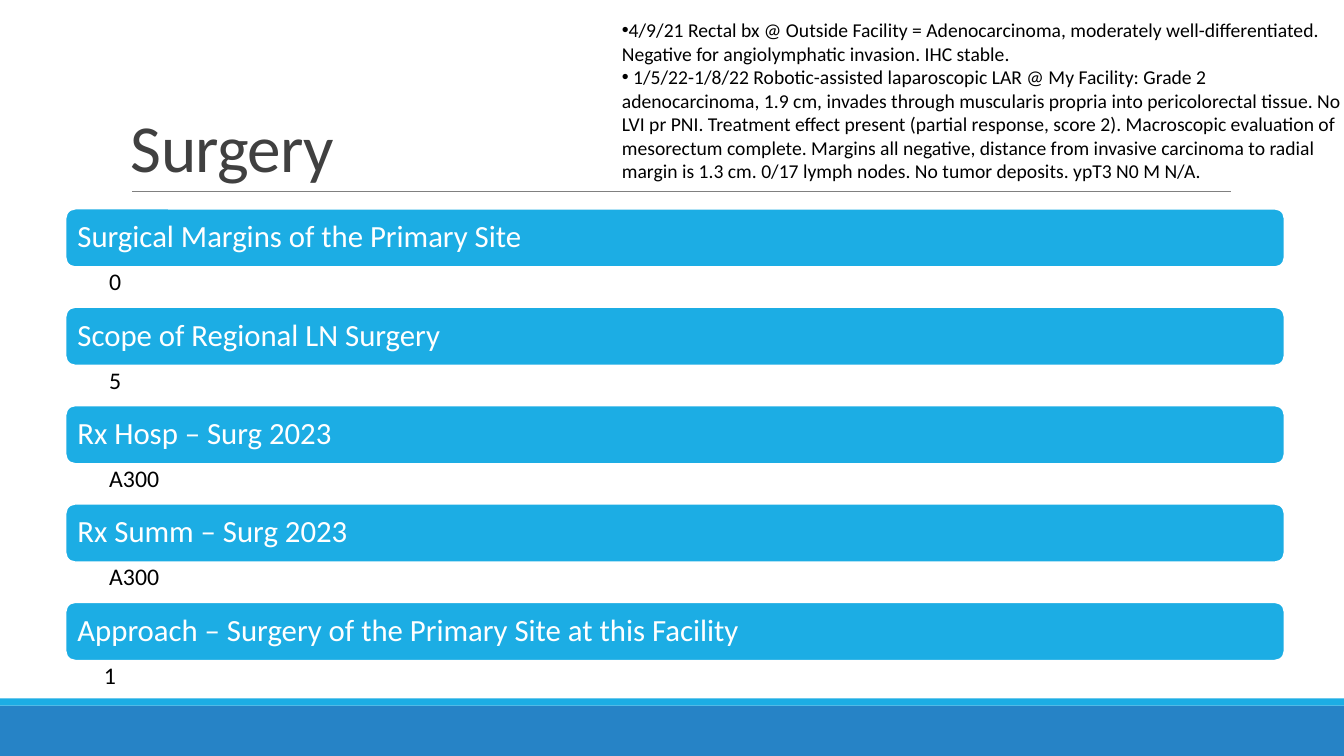
from lxml.etree import SubElement
from pptx import Presentation
from pptx.dml.color import RGBColor
from pptx.enum.shapes import MSO_CONNECTOR, MSO_SHAPE
from pptx.enum.text import MSO_ANCHOR, PP_ALIGN
from pptx.oxml.ns import qn
from pptx.util import Inches, Pt

FONT = "Calibri"
ITEMS = [
    ("Surgical Margins of the Primary Site", " 0"),
    ("Scope of Regional LN Surgery", " 5"),
    ("Rx Hosp – Surg 2023", " A300"),
    ("Rx Summ – Surg 2023", " A300"),
    ("Approach – Surgery of the Primary Site at this Facility", "1"),
]
NOTES = [
    "4/9/21 Rectal bx @ Outside Facility = Adenocarcinoma, moderately "
    "well-differentiated. Negative for angiolymphatic invasion. IHC stable.",
    " 1/5/22-1/8/22 Robotic-assisted laparoscopic LAR @ My Facility: Grade 2 "
    "adenocarcinoma, 1.9 cm, invades through muscularis propria into "
    "pericolorectal tissue. No LVI pr PNI. Treatment effect present (partial "
    "response, score 2). Macroscopic evaluation of mesorectum complete. Margins "
    "all negative, distance from invasive carcinoma to radial margin is 1.3 cm. "
    "0/17 lymph nodes. No tumor deposits. ypT3 N0 M N/A.",
]


def color(code):
    """Turn a hex string into a colour."""
    return RGBColor.from_string(code)


def block(slide, kind, box, fill, line=None):
    """Draw a filled shape in the box, outlined if a line colour is given."""
    shape = slide.shapes.add_shape(kind, *map(Inches, box))
    shape.shadow.inherit = False
    shape.fill.solid()
    shape.fill.fore_color.rgb = color(fill)
    if line:
        shape.line.color.rgb = color(line)
        shape.line.width = Pt(1.25)
    else:
        shape.line.fill.background()
    return shape


def setup(frame, pads, anchor):
    """Set wrapping, insets and anchor of a text frame."""
    frame.word_wrap = True
    frame.vertical_anchor = anchor
    (frame.margin_left, frame.margin_top,
     frame.margin_right, frame.margin_bottom) = map(Inches, pads)


def textbox(slide, box, pads, anchor=MSO_ANCHOR.TOP):
    """Add an empty text box and return its frame."""
    frame = slide.shapes.add_textbox(*map(Inches, box)).text_frame
    setup(frame, pads, anchor)
    return frame


def write(para, text, size, code, space=1.0):
    """Add one styled run to a left-aligned paragraph."""
    para.alignment = PP_ALIGN.LEFT
    para.line_spacing = space
    run = para.add_run()
    run.text = text
    run.font.name = FONT
    run.font.size = Pt(size)
    run.font.color.rgb = color(code)
    return run


def footer(slide, box):
    """Draw the two-tone band that fills the box."""
    left, top, width, height = box
    strip = 0.07
    block(slide, MSO_SHAPE.RECTANGLE,
          (left, top + strip, width, height - strip), "2683C6")
    block(slide, MSO_SHAPE.RECTANGLE, (left, top, width, strip), "1CADE4")


def heading(slide, box):
    """Write the title at the foot of the box with a rule below it."""
    left, top, width, height = box
    base = top + height
    rule = slide.shapes.add_connector(
        MSO_CONNECTOR.STRAIGHT, Inches(left + 0.11), Inches(base),
        Inches(left + width + 0.01), Inches(base))
    rule.line.color.rgb = color("808080")
    rule.line.width = Pt(0.5)
    SubElement(rule._element.spPr, qn("a:effectLst"))
    frame = textbox(slide, box, (0.1, 0.05, 0.1, 0.05), MSO_ANCHOR.BOTTOM)
    run = write(frame.paragraphs[0], "Surgery", 48, "404040", 0.85)
    run._r.get_or_add_rPr().set("spc", "-50")


def fields(slide, box):
    """Stack the coded fields evenly, each a bar with its value below."""
    left, top, width, height = box
    step = height / len(ITEMS)
    bar = 0.58
    for i, (name, value) in enumerate(ITEMS):
        y = top + i * step
        shape = block(slide, MSO_SHAPE.ROUNDED_RECTANGLE,
                      (left, y, width, bar), "1CADE4", "FFFFFF")
        frame = shape.text_frame
        setup(frame, (0.09, 0.06, 0.09, 0.06), MSO_ANCHOR.MIDDLE)
        write(frame.paragraphs[0], name, 22, "FFFFFF", 0.9)
        frame = textbox(slide, (left, y + bar, width, step - bar),
                        (0.38, 0.03, 0.17, 0.03))
        write(frame.paragraphs[0], value, 17, "000000", 0.9)


def history(slide, box):
    """List the bulleted case notes in the box."""
    frame = textbox(slide, box, (0.1, 0.05, 0.1, 0.05))
    for i, note in enumerate(NOTES):
        para = frame.add_paragraph() if i else frame.paragraphs[0]
        write(para, note, 14, "000000")
        props = para._p.get_or_add_pPr()
        SubElement(props, qn("a:buFont")).set("typeface", "Arial")
        SubElement(props, qn("a:buChar")).set("char", "•")


def main():
    """Build the slide and save it."""
    deck = Presentation()
    deck.slide_width = Inches(13.33)
    deck.slide_height = Inches(7.5)
    slide = deck.slides.add_slide(deck.slide_layouts[6])
    footer(slide, (0, 6.93, 13.33, 0.57))
    heading(slide, (1.2, 0.31, 11, 1.59))
    fields(slide, (0.65, 2.07, 12.09, 4.88))
    history(slide, (6.07, 0.13, 7.37, 1.75))
    deck.save("out.pptx")


if __name__ == "__main__":
    main()
